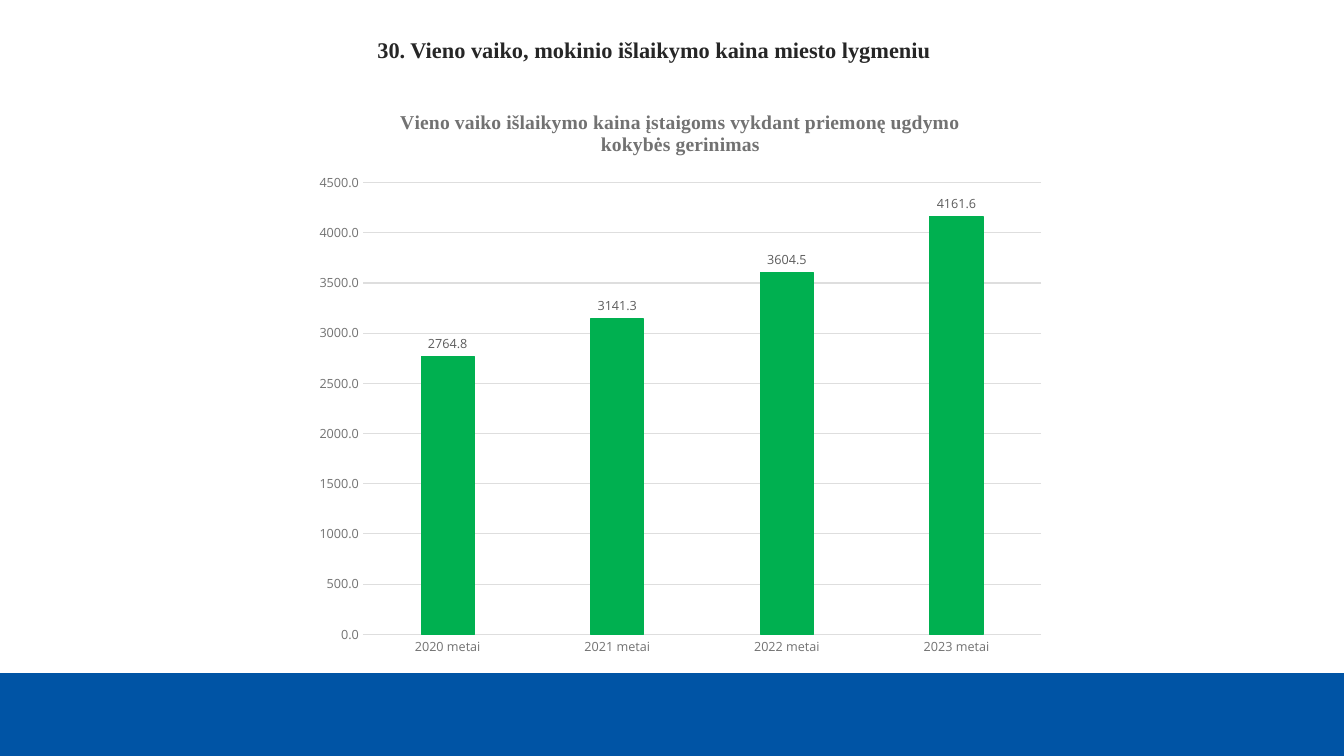
from pptx import Presentation
from pptx.chart.data import CategoryChartData
from pptx.dml.color import RGBColor
from pptx.enum.chart import XL_CHART_TYPE as ChartType
from pptx.enum.chart import XL_LABEL_POSITION as LabelPosition
from pptx.enum.chart import XL_TICK_MARK as TickMark
from pptx.enum.shapes import MSO_SHAPE as Shape
from pptx.enum.text import MSO_AUTO_SIZE as AutoSize
from pptx.util import Pt

PX = 9525  # EMU per px, 96 px to the inch
COLORS = {
    "band": "0054A5",
    "heading": "262626",
    "axis": "727272",
    "label": "5C5C5C",
    "grid": "DEDEDE",
    "bar": "00B050",
}
CHART_TITLE = "Vieno vaiko išlaikymo kaina įstaigoms vykdant priemonę ugdymo kokybės gerinimas"
COSTS = {
    "2020 metai": 2764.8,
    "2021 metai": 3141.3,
    "2022 metai": 3604.5,
    "2023 metai": 4161.6,
}


def style_font(font, name, size, color, bold=False):
    font.name = name
    font.size = Pt(size)
    font.bold = bold
    font.color.rgb = RGBColor.from_string(COLORS[color])


def style_line(line, color):
    line.color.rgb = RGBColor.from_string(COLORS[color])
    line.width = Pt(0.75)


presentation = Presentation()
presentation.slide_width = 1280 * PX
presentation.slide_height = 720 * PX
slide = presentation.slides.add_slide(presentation.slide_layouts[6])

# Footer band
band = slide.shapes.add_shape(Shape.RECTANGLE, 0, 641 * PX, 1280 * PX, 79 * PX)
band.shadow.inherit = False
band.fill.solid()
band.fill.fore_color.rgb = RGBColor.from_string(COLORS["band"])
band.line.fill.background()

# Heading
heading = slide.shapes.add_textbox(350 * PX, 30 * PX, 786 * PX, 61 * PX)
text_frame = heading.text_frame
text_frame.word_wrap = True
text_frame.auto_size = AutoSize.SHAPE_TO_FIT_TEXT
text_frame.text = "30. Vieno vaiko, mokinio išlaikymo kaina miesto lygmeniu"
style_font(text_frame.paragraphs[0].runs[0].font, "Times New Roman", 16, "heading", bold=True)

# Cost chart
chart_data = CategoryChartData(number_format="0.0")
chart_data.categories = COSTS.keys()
chart_data.add_series(CHART_TITLE, COSTS.values())
chart = slide.shapes.add_chart(
    ChartType.COLUMN_CLUSTERED, 290 * PX, 85 * PX, 716 * PX, 551 * PX, chart_data
).chart
style_font(chart.font, "Open Sans", 10, "heading")
chart.has_legend = False
chart.has_title = True
chart.chart_title.include_in_layout = False
title_frame = chart.chart_title.text_frame
title_frame.text = CHART_TITLE
style_font(title_frame.paragraphs[0].runs[0].font, "Times New Roman", 14, "axis", bold=True)

for axis in (chart.category_axis, chart.value_axis):
    axis.major_tick_mark = TickMark.NONE
    axis.minor_tick_mark = TickMark.NONE
    style_font(axis.tick_labels.font, "Open Sans", 9, "axis")
style_line(chart.category_axis.format.line, "grid")

value_axis = chart.value_axis
value_axis.minimum_scale = 0
value_axis.maximum_scale = 4500
value_axis.major_unit = 500
value_axis.format.line.fill.background()
style_line(value_axis.major_gridlines.format.line, "grid")
value_axis.tick_labels.number_format = "0.0"
value_axis.tick_labels.number_format_is_linked = False

plot = chart.plots[0]
plot.gap_width = 219
plot.overlap = -27
plot.vary_by_categories = False

bars = plot.series[0]
bars.format.fill.solid()
bars.format.fill.fore_color.rgb = RGBColor.from_string(COLORS["bar"])
style_line(bars.format.line, "bar")

labels = bars.data_labels
labels.show_value = True
labels.position = LabelPosition.OUTSIDE_END
labels.number_format = "0.0"
labels.number_format_is_linked = False
style_font(labels.font, "Open Sans", 9, "label")

presentation.save("out.pptx")
